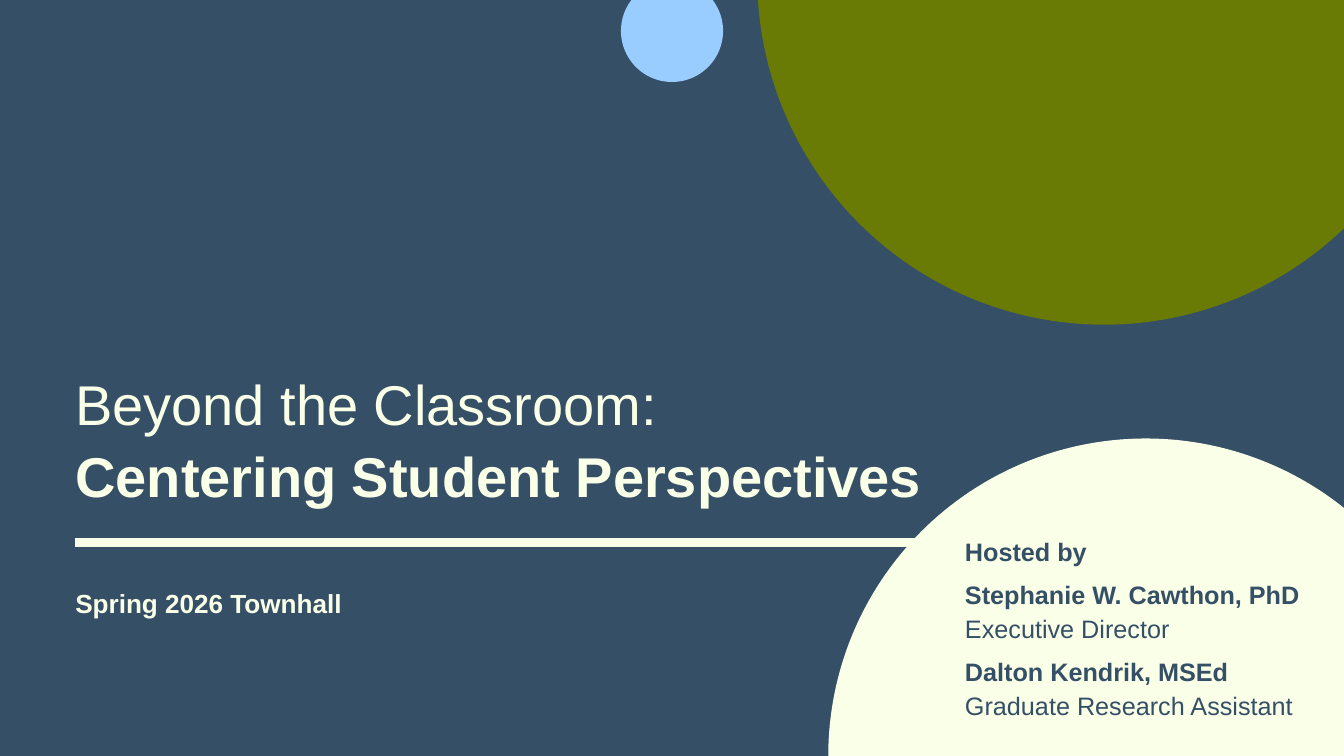
from typing import NamedTuple, Optional

from lxml import etree
from pptx import Presentation
from pptx import util as u
from pptx.dml.color import RGBColor
from pptx.enum import shapes, text
from pptx.oxml.ns import qn

W, H = u.Inches(20), u.Inches(11.25)
FONT = "Arial"
COLORS = {"navy": "354F66", "cream": "FAFFE7", "olive": "697A05", "sky": "99CCFF"}


class Circle(NamedTuple):
    cx: float
    cy: float
    diameter: float
    color: str
    outline: Optional[float] = None


class Line(NamedTuple):
    text: str
    bold: bool = False
    before: float = 0


class Block(NamedTuple):
    left: float
    top: float
    width: float
    height: float
    size: float
    spacing: float
    color: str
    lines: list[Line]
    anchor: text.MSO_ANCHOR = text.MSO_ANCHOR.TOP


LEFT, RULE_RIGHT, RULE_Y = 5.6, 70.35, 71.73
GAP = 10.6

TITLE = Block(LEFT, 48.27, 64.7, 18.58, 60, 76.8, "cream", [
    Line("Beyond the Classroom:"),
    Line("Centering Student Perspectives", True),
])
EVENT = Block(LEFT, 76.98, 59.95, 4.53, 28, 39.2, "cream", [
    Line("Spring 2026 Townhall", True),
])
HOSTS = Block(71.8, 70.04, 25.05, 25.24, 27, 35.9, "navy", [
    Line("Hosted by", True),
    Line("Stephanie W. Cawthon, PhD", True, GAP),
    Line("Executive Director"),
    Line("Dalton Kendrik, MSEd", True, GAP),
    Line("Graduate Research Assistant"),
], text.MSO_ANCHOR.BOTTOM)
CIRCLES = [
    Circle(82.15, -2.93, 51.3, "olive", 4.5),
    Circle(85.25, 100, 47.25, "cream"),
    Circle(50, 4.09, 7.6, "sky"),
]


def x(share: float) -> int:
    return round(W * share / 100)


def y(share: float) -> int:
    return round(H * share / 100)


def rgb(name: str) -> RGBColor:
    return RGBColor.from_string(COLORS[name])


def fill_block(sp, block: Block) -> None:
    sp.left, sp.top = x(block.left), y(block.top)
    sp.width, sp.height = x(block.width), y(block.height)
    tf = sp.text_frame
    tf.word_wrap = True
    tf.auto_size = text.MSO_AUTO_SIZE.NONE
    tf.vertical_anchor = block.anchor
    tf.margin_left = tf.margin_top = tf.margin_right = tf.margin_bottom = 0
    tf.text = "\n".join(line.text for line in block.lines)
    for p, line in zip(tf.paragraphs, block.lines):
        p.alignment = text.PP_ALIGN.LEFT
        p.line_spacing = u.Pt(block.spacing)
        p.space_before = u.Pt(line.before)
        for r in p.runs:
            r.font.name = FONT
            r.font.size = u.Pt(block.size)
            r.font.bold = line.bold
            r.font.color.rgb = rgb(block.color)


def add_circle(s, circle: Circle) -> None:
    d = x(circle.diameter)
    sp = s.shapes.add_shape(shapes.MSO_SHAPE.OVAL, x(circle.cx) - d // 2,
                            y(circle.cy) - d // 2, d, d)
    sp.shadow.inherit = False
    sp.fill.solid()
    sp.fill.fore_color.rgb = rgb(circle.color)
    if circle.outline:
        sp.line.color.rgb = rgb(circle.color)
        sp.line.width = u.Pt(circle.outline)
    else:
        sp.line.fill.background()


def add_rule(s) -> None:
    rule = s.shapes.add_connector(shapes.MSO_CONNECTOR.STRAIGHT, x(LEFT), y(RULE_Y),
                                  x(RULE_RIGHT), y(RULE_Y))
    rule.line.color.rgb = rgb("cream")
    rule.line.width = u.Pt(10)
    etree.SubElement(rule._element.spPr, qn("a:effectLst"))


def main() -> None:
    prs = Presentation()
    prs.slide_width, prs.slide_height = W, H
    s = prs.slides.add_slide(prs.slide_layouts[5])
    s.background.fill.solid()
    s.background.fill.fore_color.rgb = rgb("navy")
    fill_block(s.shapes.title, TITLE)
    add_rule(s)
    for circle in CIRCLES:
        add_circle(s, circle)
    for block in (EVENT, HOSTS):
        fill_block(s.shapes.add_textbox(0, 0, 0, 0), block)
    prs.save("out.pptx")


if __name__ == "__main__":
    main()
